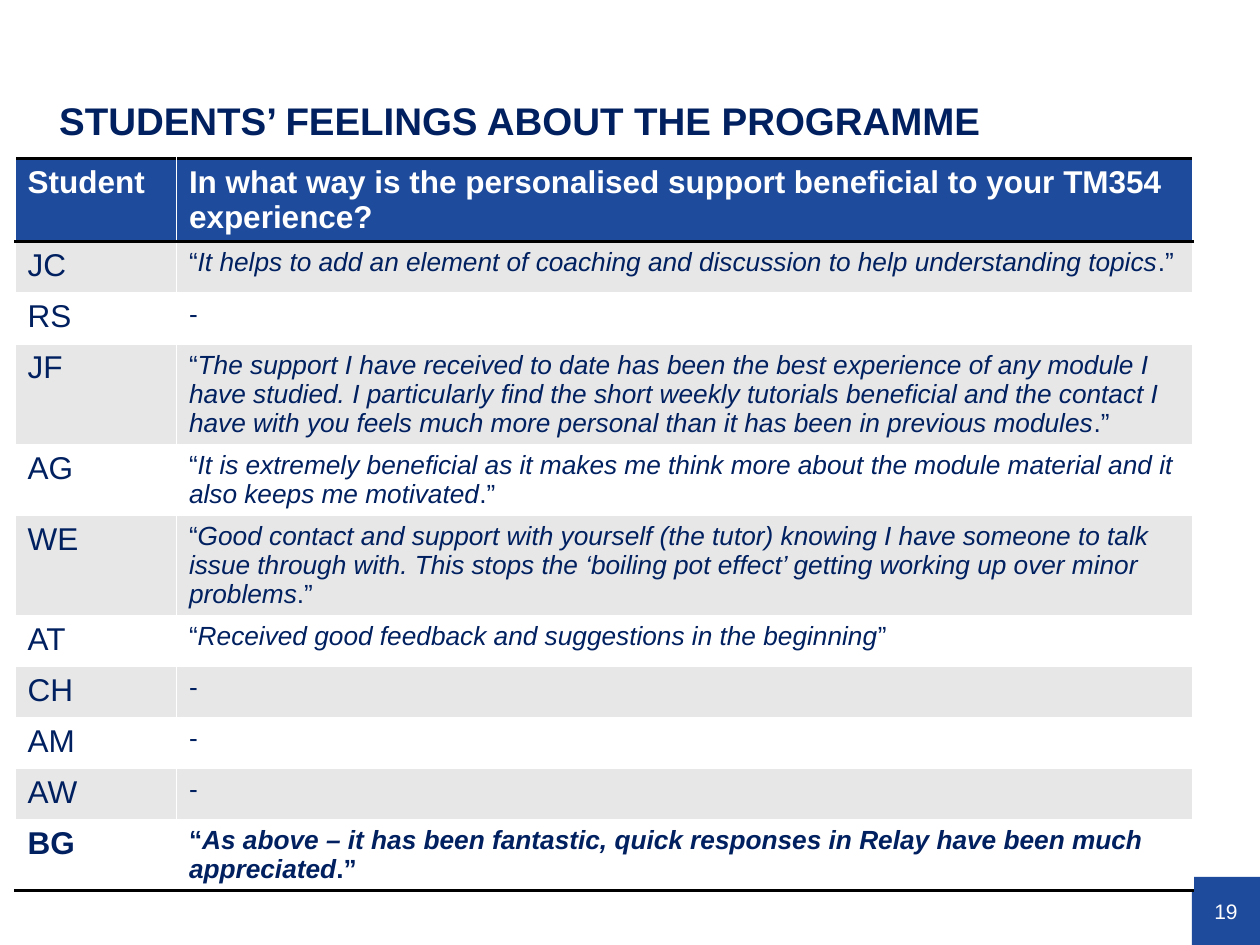
from dataclasses import dataclass

from lxml.etree import SubElement
from pptx import Presentation
from pptx.dml.color import RGBColor
from pptx.enum.shapes import MSO_SHAPE
from pptx.enum.text import MSO_ANCHOR, MSO_AUTO_SIZE, PP_ALIGN
from pptx.oxml.ns import qn
from pptx.util import Inches, Pt


@dataclass(frozen=True)
class Theme:
    font: str = "Arial"
    navy: str = "002060"
    blue: str = "1E4B9B"
    white: str = "FFFFFF"
    grey: str = "E7E7E7"
    black: str = "000000"
    title_size: int = 22
    label_size: int = 18
    quote_size: int = 15
    number_size: int = 12
    rule_width: int = 2
    row_height: float = 29.2


class SlideBuilder:
    """Places elements on a grid of 100 columns by 75 rows."""

    def __init__(self, deck, theme):
        self.theme = theme
        self.unit_x = deck.slide_width / 100
        self.unit_y = deck.slide_height / 75
        self.page = deck.slides.add_slide(deck.slide_layouts[5])

    def area(self, column, row, columns, rows):
        return (round(column * self.unit_x), round(row * self.unit_y),
                round(columns * self.unit_x), round(rows * self.unit_y))

    def span(self, para, text, size, color, bold=False, italic=False):
        span = para.add_run()
        span.text = text
        font = span.font
        font.name, font.size = self.theme.font, Pt(size)
        font.bold, font.italic = bold, italic
        font.color.rgb = RGBColor.from_string(color)

    def fill(self, target, color):
        target.fill.solid()
        target.fill.fore_color.rgb = RGBColor.from_string(color)

    def frame(self, box, left=0, top=0):
        frame = box.text_frame
        frame.word_wrap = True
        frame.auto_size = MSO_AUTO_SIZE.NONE
        frame.vertical_anchor = MSO_ANCHOR.MIDDLE
        frame.margin_left, frame.margin_top = Inches(left), Inches(top)
        frame.margin_right = frame.margin_bottom = 0
        return frame.paragraphs[0]

    def title(self, text, *place):
        box = self.page.shapes.title
        box.left, box.top, box.width, box.height = self.area(*place)
        para = self.frame(box, left=0.04, top=0.02)
        para.alignment = PP_ALIGN.LEFT
        para.line_spacing = 0.9
        self.span(para, text, self.theme.title_size, self.theme.navy, bold=True)

    def page_number(self, text, *place):
        box = self.page.shapes.add_shape(MSO_SHAPE.RECTANGLE, *self.area(*place))
        box.shadow.inherit = False
        box.line.fill.background()
        self.fill(box, self.theme.blue)
        para = self.frame(box)
        para.alignment = PP_ALIGN.CENTER
        self.span(para, text, self.theme.number_size, self.theme.white)

    def rule(self, cell, *sides):
        # Borders precede the fill in the cell properties
        properties = cell._tc.get_or_add_tcPr()
        for index, side in enumerate(sides):
            line = SubElement(properties, qn(f"a:{side}"), w=str(Pt(self.theme.rule_width)))
            color = SubElement(SubElement(line, qn("a:solidFill")), qn("a:srgbClr"))
            color.set("val", self.theme.black)
            properties.insert(index, line)

    def table(self, headings, answers, column, row, widths):
        theme = self.theme
        count = len(answers) + 1
        left, top, width, _ = self.area(column, row, sum(widths), 0)
        grid = self.page.shapes.add_table(
            count, len(widths), left, top, width, Pt(theme.row_height * count)).table
        for grid_column, share in zip(grid.columns, widths):
            grid_column.width = round(share * self.unit_x)

        # Header row
        for cell, heading in zip(grid.rows[0].cells, headings):
            self.fill(cell, theme.blue)
            self.rule(cell, "lnT", "lnB")
            self.span(cell.text_frame.paragraphs[0], heading,
                      theme.label_size, theme.white, bold=True)

        # Banded answer rows, the last one in bold
        for index, (student, quote, ending) in enumerate(answers, start=1):
            last = index == count - 1
            label_cell, quote_cell = grid.rows[index].cells
            for cell in (label_cell, quote_cell):
                self.fill(cell, theme.grey if index % 2 else theme.white)
                if last:
                    self.rule(cell, "lnB")
            self.span(label_cell.text_frame.paragraphs[0], student,
                      theme.label_size, theme.navy, bold=last)
            parts = [("“", False), (quote, True), (ending, False)] if quote else [("-", False)]
            for text, italic in parts:
                self.span(quote_cell.text_frame.paragraphs[0], text,
                          theme.quote_size, theme.navy, bold=last, italic=italic)


HEADINGS = ("Student",
            "In what way is the personalised support beneficial to your TM354 experience?")
ANSWERS = [
    ("JC", "It helps to add an element of coaching and discussion to help "
           "understanding topics", ".”"),
    ("RS", "", ""),
    ("JF", "The support I have received to date has been the best experience of any "
           "module I have studied. I particularly find the short weekly tutorials "
           "beneficial and the contact I have with you feels much more personal than "
           "it has been in previous modules", ".”"),
    ("AG", "It is extremely beneficial as it makes me think more about the module "
           "material and it also keeps me motivated", ".”"),
    ("WE", "Good contact and support with yourself (the tutor) knowing I have someone "
           "to talk issue through with. This stops the ‘boiling pot effect’ getting "
           "working up over minor problems", ".”"),
    ("AT", "Received good feedback and suggestions in the beginning", "”"),
    ("CH", "", ""),
    ("AM", "", ""),
    ("AW", "", ""),
    ("BG", "As above – it has been fantastic, quick responses in Relay have been much "
           "appreciated", ".”"),
]


def main():
    deck = Presentation()
    deck.slide_width, deck.slide_height = Inches(10), Inches(7.5)
    builder = SlideBuilder(deck, Theme())
    builder.page_number("19", 94.6, 69.6, 5.4, 5.4)
    builder.title("STUDENTS’ FEELINGS ABOUT THE PROGRAMME", 4.3, 8.3, 90.4, 2.8)
    builder.table(HEADINGS, ANSWERS, 1.2, 12.6, (12.8, 80.7))
    deck.save("out.pptx")


if __name__ == "__main__":
    main()
